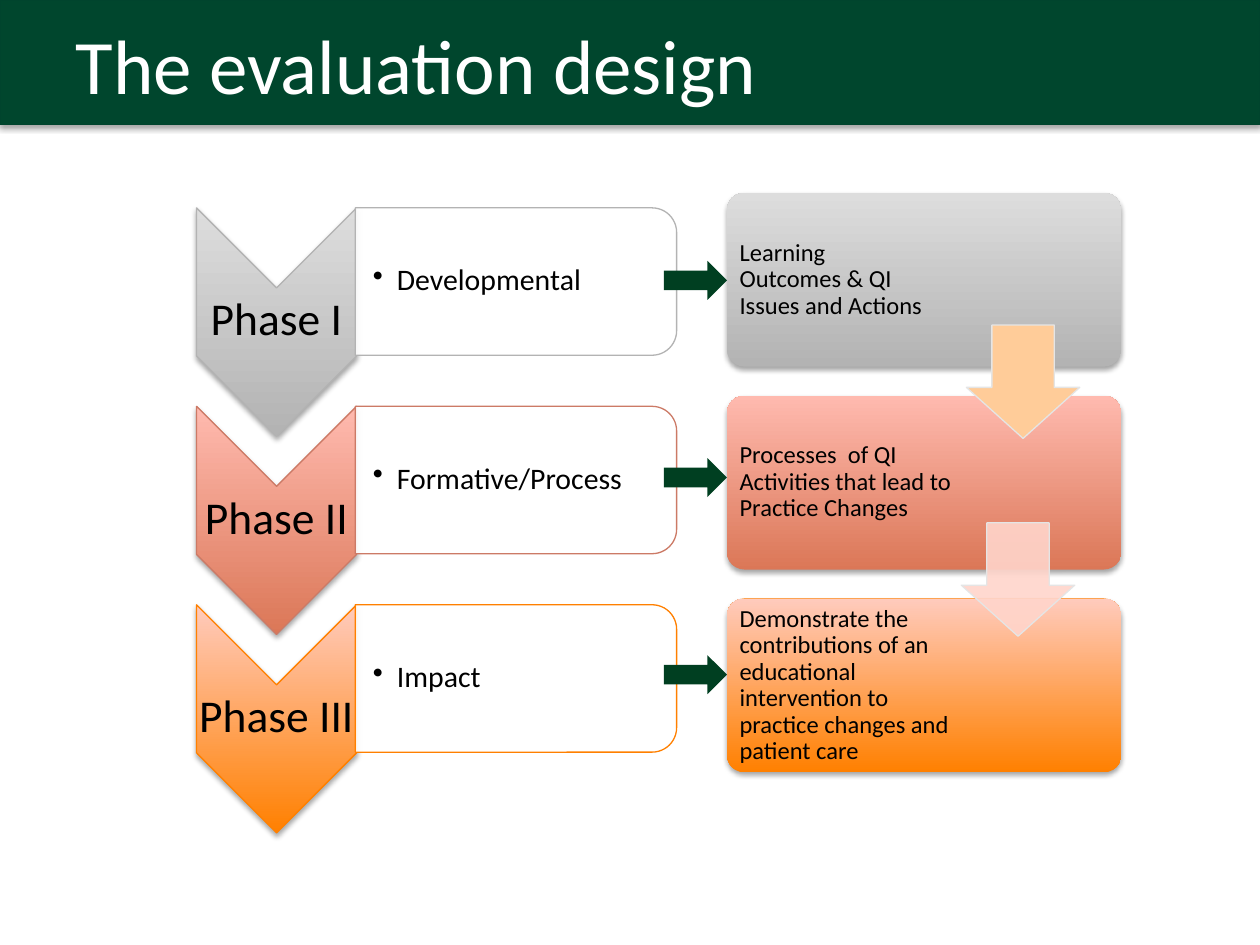
from dataclasses import dataclass

from lxml import etree
from pptx import Presentation, util as u
from pptx.dml.color import RGBColor
from pptx.enum import shapes, text
from pptx.oxml import ns

Kind = shapes.MSO_SHAPE
Align = text.PP_ALIGN


# Colours and type sizes
@dataclass(frozen=True)
class Theme:
    font: str = "Calibri"
    title: int = 44
    phase: int = 26
    kind: int = 17
    note: int = 14
    ink: str = "000000"
    paper: str = "FFFFFF"
    band: str = "00462D"
    edge: str = "00442D"
    arrow: str = "003F21"
    rim: str = "E5E5E5"


@dataclass(frozen=True)
class Phase:
    name: str
    kind: str
    note: str
    wide: float  # width of the note text
    dark: str
    light: str
    line: str


@dataclass(frozen=True)
class Drop:
    left: float
    top: float
    fill: str
    alpha: int


THEME = Theme()
PHASES = [
    Phase("Phase I", "Developmental", "Learning Outcomes & QI Issues and Actions",
          1.58, "B3B3B3", "DDDDDD", "B3B3B3"),
    Phase("Phase II", "Formative/Process",
          "Processes  of QI Activities that lead to Practice Changes",
          1.84, "DB7757", "FFBAAF", "CC7A66"),
    Phase("Phase III", "Impact",
          "Demonstrate the contributions of an educational intervention to "
          "practice changes and patient care",
          1.84, "FF8000", "FFCBBD", "FF8000"),
]
DROPS = [Drop(7.67, 2.58, "FFCC99", 100), Drop(7.63, 4.15, "FFD5CB", 90)]


def rgb(code: str) -> RGBColor:
    return RGBColor.from_string(code)


def add(parent, tag: str, **attrs):
    return etree.SubElement(parent, ns.qn(tag), attrs)


def draw(slide, kind, left: float, top: float, wide: float, high: float,
         fill: str = "", line: str = "", turn: int = 0):
    """Add a flat preset shape, with an optional outline and rotation."""
    shape = slide.shapes.add_shape(
        kind, *(u.Inches(n) for n in (left, top, wide, high)))
    shape.rotation = turn
    shape.shadow.inherit = False
    if fill:
        shape.fill.solid()
        shape.fill.fore_color.rgb = rgb(fill)
    if line:
        shape.line.color.rgb = rgb(line)
        shape.line.width = u.Pt(0.75)
    else:
        shape.line.fill.background()
    return shape


def shade(shape, dark: str, light: str) -> None:
    """Fill from dark at the bottom to light at the top of the page."""
    shape.fill.gradient()
    shape.fill.gradient_angle = 90
    for stop, code, place in zip(shape.fill.gradient_stops, (dark, light), (0, 1)):
        stop.color.rgb = rgb(code)
        stop.position = place
    shape.element.spPr.find(ns.qn("a:gradFill")).set("rotWithShape", "0")


def lift(shape) -> None:
    """Cast a soft shadow straight down."""
    glow = add(shape.element.spPr.find(ns.qn("a:effectLst")), "a:outerShdw",
               blurRad=str(u.Pt(3.1)), dist=str(u.Pt(1.8)), dir="5400000",
               algn="ctr", rotWithShape="0")
    add(add(glow, "a:srgbClr", val="000000"), "a:alpha", val="35000")


def fade(shape, alpha: int) -> None:
    color = shape.element.spPr.find(ns.qn("a:solidFill"))[0]
    add(color, "a:alpha", val=str(alpha * 1000))


def write(slide, words: str, left: float, top: float, wide: float, high: float,
          size: int, pads: tuple[float, float], align=Align.LEFT):
    """Add a text box; pads are the left inset and the other three."""
    box = slide.shapes.add_textbox(
        *(u.Inches(n) for n in (left, top, wide, high)))
    frame = box.text_frame
    frame.word_wrap = True
    frame.vertical_anchor = text.MSO_ANCHOR.MIDDLE
    frame.margin_left = u.Inches(pads[0])
    frame.margin_top = frame.margin_right = frame.margin_bottom = u.Inches(pads[1])
    para = frame.paragraphs[0]
    para.text = words
    para.alignment = align
    para.line_spacing = 0.9
    style(para, size, THEME.ink)
    return para


def style(para, size: int, color: str) -> None:
    para.font.name = THEME.font
    para.font.size = u.Pt(size)
    para.font.color.rgb = rgb(color)


def bullet(para) -> None:
    props = para._p.get_or_add_pPr()
    props.set("marL", str(u.Inches(0.19)))
    props.set("indent", str(-u.Inches(0.19)))
    mark = etree.Element(ns.qn("a:buChar"), {"char": "•"})
    props.find(ns.qn("a:defRPr")).addprevious(mark)


def head(slide, words: str) -> None:
    """Draw the green band and set the title on it."""
    band = draw(slide, Kind.RECTANGLE, 0, 0, 10, 0.99, THEME.band, THEME.edge)
    lift(band)
    title = slide.shapes.title
    title.element.addprevious(band.element)
    title.left, title.top, title.width, title.height = (
        u.Inches(n) for n in (0.5, 0, 9, 1.01))
    frame = title.text_frame
    frame.text = words
    frame.auto_size = text.MSO_AUTO_SIZE.NONE
    frame.vertical_anchor = text.MSO_ANCHOR.MIDDLE
    frame.paragraphs[0].alignment = Align.LEFT
    style(frame.paragraphs[0], THEME.title, THEME.paper)


def stage(slide, row: int, item: Phase) -> None:
    """Draw the chevron of one phase and the panel beside it."""
    drop = row * 1.575
    mark = draw(slide, Kind.CHEVRON, 1.29, 1.92 + drop, 1.81, 1.27,
                line=item.line, turn=90)
    shade(mark, item.dark, item.light)
    lift(mark)
    write(slide, item.name, 1.56, 2.28 + drop, 1.27, 0.54, THEME.phase,
          (0.02, 0.02), Align.CENTER)
    panel = draw(slide, Kind.ROUND_2_SAME_RECTANGLE, 3.51, 0.96 + drop, 1.17, 2.55,
                 THEME.paper, item.line, 90)
    fade(panel, 90)
    bullet(write(slide, item.kind, 2.83, 1.7 + drop, 2.49, 1.06, THEME.kind,
                 (0.13, 0.01)))


def result(slide, row: int, item: Phase) -> None:
    """Draw the rounded box with the outcome of one phase."""
    top = 1.53 + row * 1.61
    box = draw(slide, Kind.ROUNDED_RECTANGLE, 5.77, top, 3.13, 1.38)
    box.adjustments[0] = 0.1
    shade(box, item.dark, item.light)
    lift(box)
    write(slide, item.note, 5.81, top + 0.04, item.wide, 1.3, THEME.note,
          (0.06, 0.06))


def main() -> None:
    deck = Presentation()
    deck.slide_width, deck.slide_height = u.Inches(10), u.Inches(7.5)
    slide = deck.slides.add_slide(deck.slide_layouts[5])
    head(slide, "The evaluation design")

    # Phases on the left, outcomes on the right
    for part in (stage, result):
        for row, item in enumerate(PHASES):
            part(slide, row, item)

    # Arrows from one outcome down to the next
    for item in DROPS:
        arrow = draw(slide, Kind.DOWN_ARROW, item.left, item.top, 0.9, 0.9,
                     item.fill, THEME.rim)
        arrow.adjustments[0], arrow.adjustments[1] = 0.55, 0.45
        fade(arrow, item.alpha)

    # Arrows from each phase to its outcome
    for row in range(len(PHASES)):
        draw(slide, Kind.RIGHT_ARROW, 5.27, 2.07 + row * 1.565, 0.5, 0.31, THEME.arrow)

    deck.save("out.pptx")


if __name__ == "__main__":
    main()
